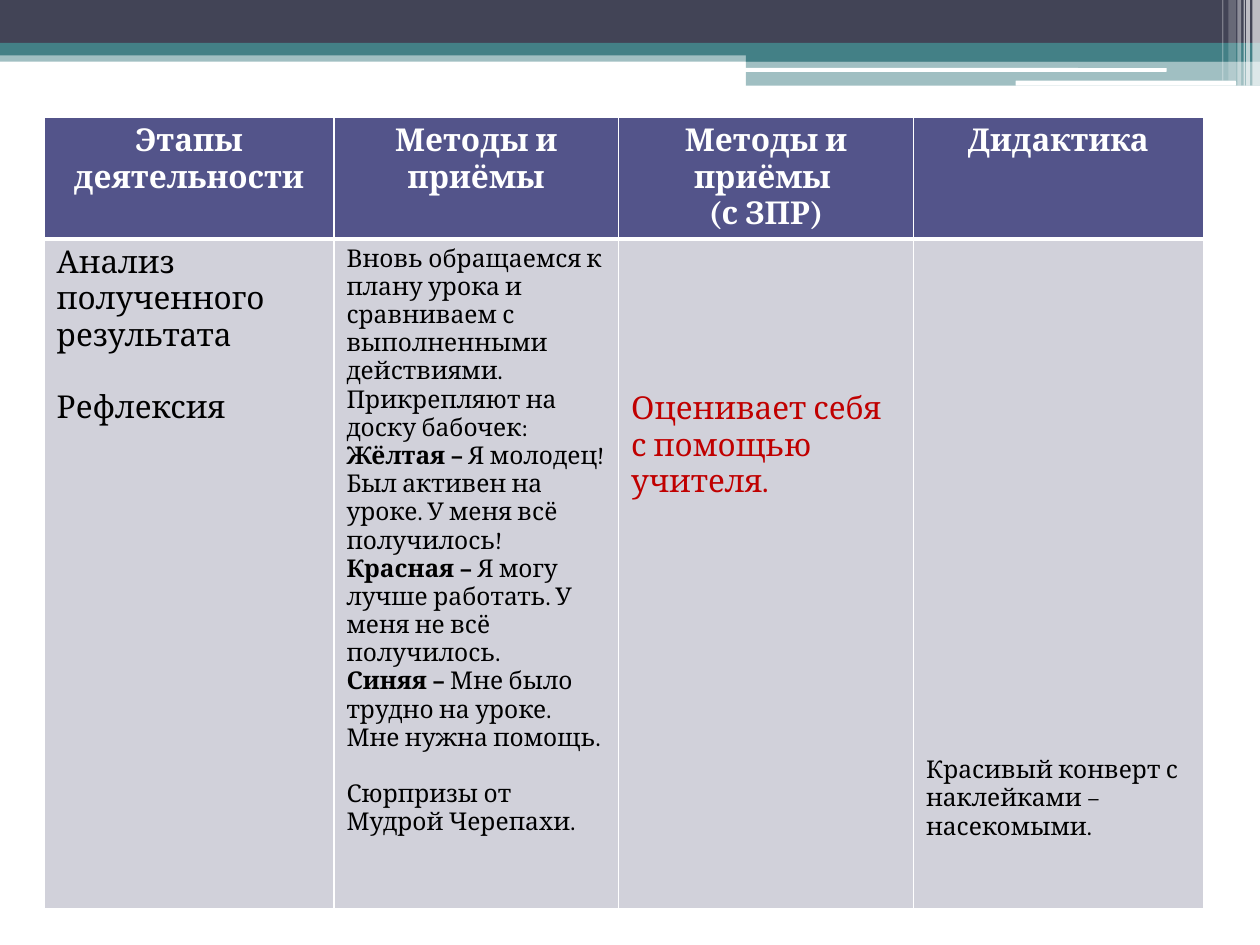
"""Build a lesson-plan table slide under a layered colour band."""
from lxml import etree
from pptx import Presentation, util as u
from pptx.dml.color import RGBColor
from pptx.enum import shapes, text
from pptx.oxml.ns import qn

FONT = "Cambria"
WHITE, BLACK, RED = "FFFFFF", "000000", "C00000"
TEAL, SLATE, HEAD, BODY = "438086", "424456", "53548A", "D1D1DA"

BARS = [
    (0, 0.4, 10, 0.09, TEAL, 50),
    (0, 0, 10, 0.34, SLATE, 100),
    (0, 0.34, 10, 0.1, TEAL, 100),
    (5.92, 0.39, 4.08, 0.1, TEAL, 100),
    (5.92, 0.48, 4.08, 0.2, TEAL, 50),
]
PILLS = [(5.91, 0.54, 3.35, 0.03, WHITE, 100), (8.06, 0.64, 1.75, 0.04, WHITE, 100)]
STRIPES = [
    (9.94, 0.06, 0.68, 65), (9.89, 0.03, 0.68, 65), (9.87, 0.01, 0.68, 60),
    (9.82, 0.03, 0.68, 40), (9.75, 0.06, 0.64, 20), (9.7, 0.01, 0.64, 30),
]

COLS, ROWS = [2.3, 2.26, 2.34, 2.3], [0.96, 5.32]
LINE = 0.29
HEADS = [
    ["Этапы деятельности"],
    ["Методы и приёмы"],
    ["Методы и приёмы ", "(с ЗПР)"],
    ["Дидактика"],
]
# Each body cell: size, colour, lines skipped at the top, (bold lead, text) items
CELLS = [
    (18, BLACK, 0, [("", "Анализ полученного результата"), ("", "Рефлексия")]),
    (14, BLACK, 0, [
        ("", "Вновь обращаемся к плану урока и сравниваем с выполненными действиями."),
        ("", "Прикрепляют на доску бабочек:"),
        ("Жёлтая – ", "Я молодец! Был активен на уроке. У меня всё получилось!"),
        ("Красная – ", "Я могу лучше работать. У меня не всё получилось."),
        ("Синяя – ", "Мне было трудно на уроке. Мне нужна помощь."),
        ("", "Сюрпризы от Мудрой Черепахи."),
    ]),
    (18, RED, 4, [("", "Оценивает себя с помощью учителя.")]),
    (14, BLACK, 14, [("", "Красивый конверт с наклейками – насекомыми.")]),
]
GAPS = {"Рефлексия": 20.7, "Сюрпризы от Мудрой Черепахи.": 16.1}


def rgb(code):
    """Turn a hex string into a colour."""
    return RGBColor.from_string(code)


def bar(slide, kind, x, y, w, h, code, alpha):
    """Draw one flat bar of the band."""
    shape = slide.shapes.add_shape(kind, *map(u.Inches, (x, y, w, h)))
    shape.shadow.inherit = False
    shape.fill.solid()
    shape.fill.fore_color.rgb = rgb(code)
    shape.line.fill.background()
    if alpha < 100:
        tint = shape._element.spPr.find(".//" + qn("a:srgbClr"))
        etree.SubElement(tint, qn("a:alpha"), val=str(alpha * 1000))


def dress(cell, code, top, base):
    """Give a cell its white borders and its fill."""
    props = cell._tc.get_or_add_tcPr()
    for side, width in zip("LRTB", (1, 1, top, base)):
        line = etree.SubElement(props, qn("a:ln" + side), w=str(u.Pt(width)))
        fill = etree.SubElement(line, qn("a:solidFill"))
        etree.SubElement(fill, qn("a:srgbClr"), val=WHITE)
    cell.fill.solid()
    cell.fill.fore_color.rgb = rgb(code)


def write(cell, items, size, code, bold=False, align=text.PP_ALIGN.LEFT):
    """Write paragraphs, each with an optional bold lead."""
    frame = cell.text_frame
    for i, (lead, words) in enumerate(items):
        para = frame.add_paragraph() if i else frame.paragraphs[0]
        para.alignment = align
        if words in GAPS:
            para.space_before = u.Pt(GAPS[words])
        for part, strong in ((lead, True), (words, bold)):
            if part:
                run = para.add_run()
                run.text, run.font.bold = part, strong
                run.font.name, run.font.size = FONT, u.Pt(size)
                run.font.color.rgb = rgb(code)


def main():
    """Build and save the slide."""
    prs = Presentation()
    prs.slide_width, prs.slide_height = u.Inches(10), u.Inches(7.5)
    slide = prs.slides.add_slide(prs.slide_layouts[6])
    kind = shapes.MSO_SHAPE
    for item in BARS:
        bar(slide, kind.RECTANGLE, *item)
    for item in PILLS:
        bar(slide, kind.ROUNDED_RECTANGLE, *item)
    for x, w, h, alpha in STRIPES:
        bar(slide, kind.RECTANGLE, x, 0, w, h, WHITE, alpha)

    area = map(u.Inches, (0.35, 0.93, sum(COLS), sum(ROWS)))
    table = slide.shapes.add_table(len(ROWS), len(COLS), *area).table
    table.horz_banding = False
    for row, size in zip(table.rows, ROWS):
        row.height = u.Inches(size)
    for i, (width, head, body) in enumerate(zip(COLS, HEADS, CELLS)):
        table.columns[i].width = u.Inches(width)
        cell = table.cell(0, i)
        dress(cell, HEAD, 1, 3)
        write(cell, [("", words) for words in head], 18, WHITE, True, text.PP_ALIGN.CENTER)
        size, code, skip, items = body
        cell = table.cell(1, i)
        dress(cell, BODY, 3, 1)
        cell.margin_top = u.Inches(0.05 + skip * LINE)
        write(cell, items, size, code)
    prs.save("out.pptx")


if __name__ == "__main__":
    main()
